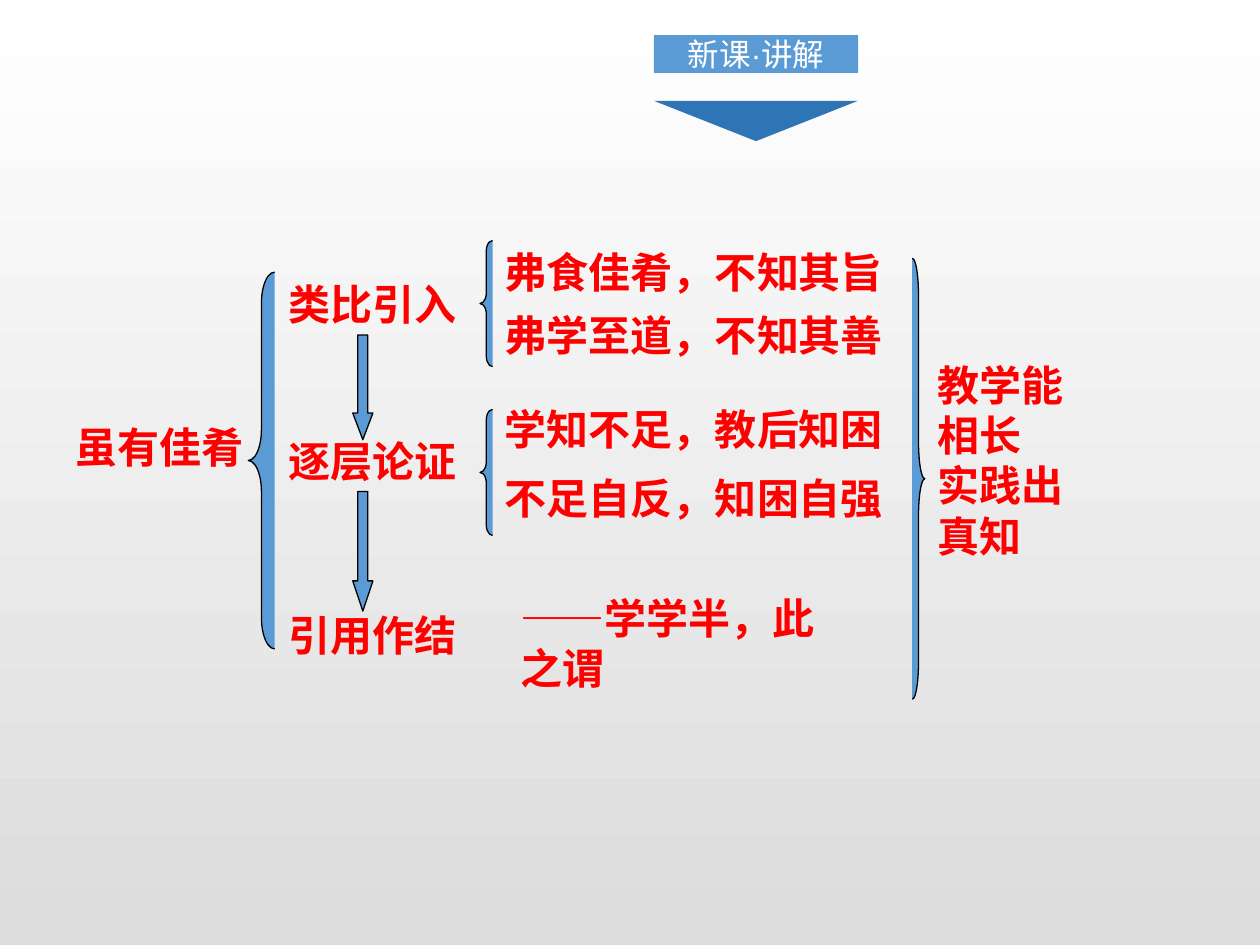
import pptx
import pptx.dml.color
import pptx.enum.shapes
import pptx.enum.text
import pptx.util
from pptx.util import Inches

COLORS = {"text": "FF0000", "banner": "5B9BD5", "pointer": "2E75B6", "outline": "000000",
          "light": "FFFFFF", "background_end": "DCDCDC"}
SHAPES = pptx.enum.shapes.MSO_SHAPE
ALIGN = pptx.enum.text.PP_ALIGN
ANCHOR = pptx.enum.text.MSO_ANCHOR


def rgb(name):
    """Return the named colour."""
    return pptx.dml.color.RGBColor.from_string(COLORS[name])


def write_text(shape, text, size=24, color="text", bold=True, align=ALIGN.LEFT):
    """Fill a shape with wrapped text, one paragraph for each line."""
    frame = shape.text_frame
    frame.word_wrap = True
    frame.text = text
    for paragraph in frame.paragraphs:
        paragraph.alignment = align
        font = paragraph.runs[0].font
        font.name = "Arial"
        font.size = pptx.util.Pt(size)
        font.bold = bold
        font.color.rgb = rgb(color)


def add_label(slide, text, left, top, width, height=0.5):
    """Add a bold red label."""
    box = slide.shapes.add_textbox(Inches(left), Inches(top), Inches(width), Inches(height))
    write_text(box, text)


def add_figure(slide, kind, left, top, width, height, fill="banner", outline=True, adjustments=()):
    """Add a filled preset shape, outlined if asked."""
    shape = slide.shapes.add_shape(kind, Inches(left), Inches(top), Inches(width), Inches(height))
    shape.shadow.inherit = False
    shape.fill.solid()
    shape.fill.fore_color.rgb = rgb(fill)
    if outline:
        shape.line.color.rgb = rgb("outline")
        shape.line.width = pptx.util.Pt(0.75)
    else:
        shape.line.fill.background()
    for index, value in enumerate(adjustments):
        shape.adjustments[index] = value
    return shape


def set_background(slide):
    """Shade the slide from white down to grey."""
    fill = slide.background.fill
    fill.gradient()
    fill.gradient_angle = 270
    for stop, position, color in zip(fill.gradient_stops, (0, 1), ("light", "background_end")):
        stop.position = position
        stop.color.rgb = rgb(color)


def add_header(slide, left, top, width, height):
    """Add the section banner and the pointer at the foot of its box."""
    banner = add_figure(slide, SHAPES.RECTANGLE, left, top, width, 0.3, outline=False)
    frame = banner.text_frame
    frame.margin_left = frame.margin_right = frame.margin_top = frame.margin_bottom = 0
    frame.vertical_anchor = ANCHOR.MIDDLE
    write_text(banner, "新课·讲解", size=18, color="light", bold=False, align=ALIGN.CENTER)
    pointer = add_figure(slide, SHAPES.ISOSCELES_TRIANGLE, left, top + height - 0.32,
                         width, 0.32, fill="pointer", outline=False)
    pointer.rotation = 180


def add_steps(slide, left, top, height):
    """Add the title, its brace and the three steps joined by arrows."""
    add_label(slide, "虽有佳肴", left, top + 1.14, 1.66)
    add_figure(slide, SHAPES.LEFT_BRACE, left + 1.47, top, 0.21, height, adjustments=(1.17, 0.5))
    for text, offset in (("类比引入", 0), ("逐层论证", 1.25), ("引用作结", 2.63)):
        add_label(slide, text, left + 1.69, top + offset, 1.91)
    for offset, length, head in ((0.5, 0.83, 1.32), (1.74, 0.95, 1.5)):
        add_figure(slide, SHAPES.DOWN_ARROW, left + 2.3, top + offset, 0.16, length,
                   adjustments=(0.5, head))


def add_quotes(slide, left, top, lines):
    """Add a pair of quoted lines behind a brace; lines hold text and offset."""
    add_figure(slide, SHAPES.LEFT_BRACE, left, top, 0.1, 1, adjustments=(0.83, 0.5))
    for text, offset in lines:
        add_label(slide, text, left + 0.1, top + offset, 3.73)


def add_conclusion(slide, left, top, height):
    """Add the closing brace and the lesson drawn from the text."""
    add_figure(slide, SHAPES.RIGHT_BRACE, left, top, 0.1, height, adjustments=(2.95, 0.5))
    add_label(slide, "教学能相长\n实践出真知", left + 0.1, top + 0.75, 1.21, 1.72)


def main():
    """Build the slide and save it."""
    presentation = pptx.Presentation()
    presentation.slide_width = Inches(10)
    presentation.slide_height = Inches(7.5)
    slide = presentation.slides.add_slide(presentation.slide_layouts[6])
    set_background(slide)
    add_steps(slide, 0.5, 2.16, 2.99)
    add_quotes(slide, 3.81, 1.91, (("弗食佳肴，不知其旨", 0), ("弗学至道，不知其善", 0.5)))
    add_quotes(slide, 3.81, 3.25, (("学知不足，教后知困", -0.1), ("不足自反，知困自强", 0.45)))
    add_label(slide, "——学学半，此之谓", 4.03, 4.65, 2.76, 0.91)
    add_conclusion(slide, 7.24, 2.05, 3.5)
    add_header(slide, 5.19, 0.28, 1.62, 0.84)
    presentation.save("out.pptx")


if __name__ == "__main__":
    main()
